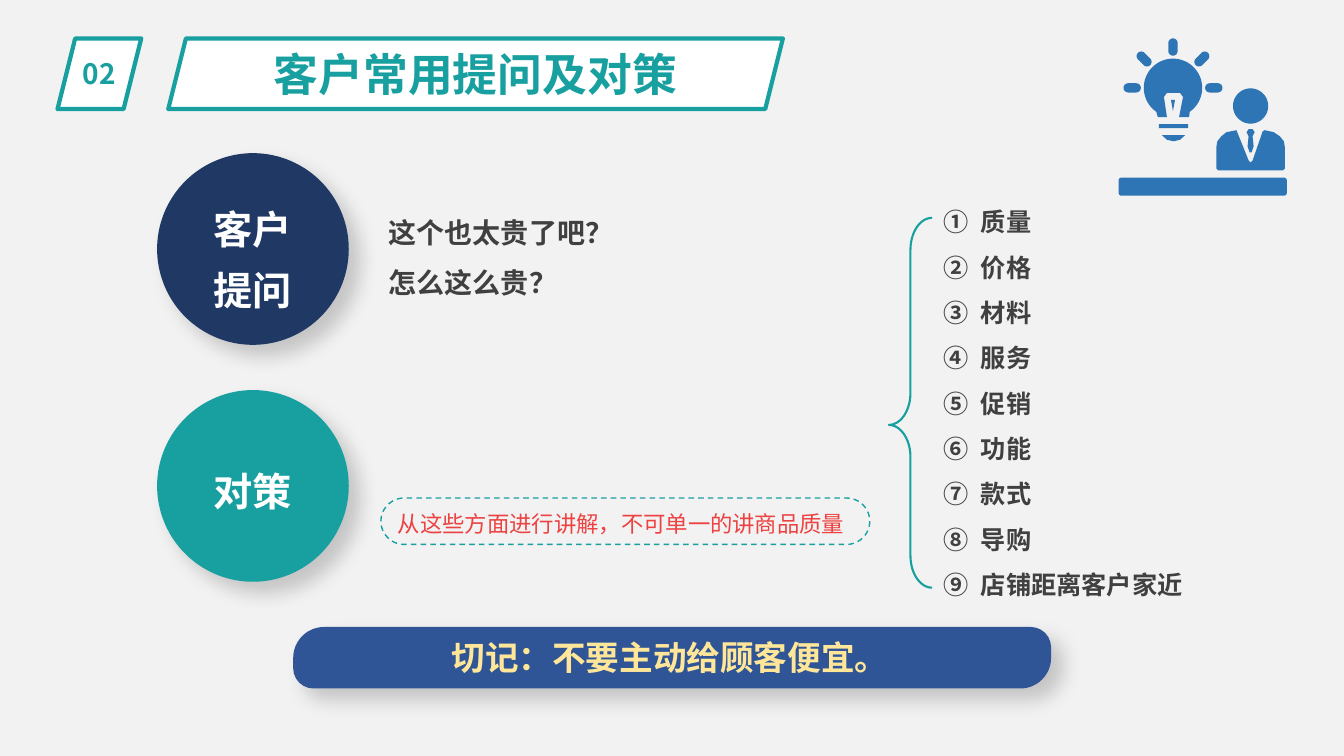
import math
from dataclasses import dataclass
from typing import Any, Optional

import pptx
import pptx.dml.color
import pptx.enum.dml
import pptx.enum.lang
import pptx.enum.shapes
import pptx.enum.text
import pptx.oxml
import pptx.oxml.ns
import pptx.util

Cm = pptx.util.Cm
Pt = pptx.util.Pt
SHAPE = pptx.enum.shapes.MSO_SHAPE
ALIGN = pptx.enum.text.PP_ALIGN
Points = list[tuple[float, float]]


@dataclass(frozen=True)
class Theme:
    font: str = "Noto Sans CJK SC"
    background: str = "F2F2F2"
    white: str = "FFFFFF"
    teal: str = "189FA0"
    navy: str = "203864"
    blue: str = "2F5597"
    icon: str = "2E75B6"
    ink: str = "404040"
    red: str = "EC4242"
    gold: str = "FFE699"
    title: int = 32
    circle: int = 28
    banner: int = 24
    body: int = 20
    item: int = 18
    hint: int = 16


@dataclass(frozen=True)
class Box:
    """Left, top, width and height in centimetres."""
    left: float
    top: float
    width: float
    height: float

    def lengths(self) -> tuple:
        return Cm(self.left), Cm(self.top), Cm(self.width), Cm(self.height)


@dataclass(frozen=True)
class TextStyle:
    size: int
    color: str
    bold: bool = True
    align: Optional[Any] = None
    spacing: Optional[float] = None


@dataclass(frozen=True)
class Outline:
    color: str
    width: float
    dash: Optional[Any] = None


@dataclass(frozen=True)
class Label:
    box: Box
    text: str
    size: int


@dataclass(frozen=True)
class Circle:
    top: float
    fill: str
    text: str
    text_box: Box


THEME = Theme()
HEADERS = [
    Label(Box(1.45, 0.97, 2.11, 1.78), "02", THEME.body),
    Label(Box(4.24, 0.97, 15.49, 1.78), "客户常用提问及对策", THEME.title),
]
CIRCLES = [
    Circle(3.86, THEME.navy, "客户\n提问", Box(5.11, 4.7, 2.51, 3.23)),
    Circle(9.83, THEME.teal, "对策", Box(5.11, 11.3, 2.51, 1.65)),
]
TOPICS = ["质量", "价格", "材料", "服务", "促销", "功能", "款式", "导购", "店铺距离客户家近"]


def rgb(color: str) -> Any:
    return pptx.dml.color.RGBColor.from_string(color)


def append_xml(parent: Any, xml: str) -> None:
    """Append an element whose opening tag has at least one attribute."""
    tag, rest = xml.split(" ", 1)
    parent.append(pptx.oxml.parse_xml(f"{tag} {pptx.oxml.ns.nsdecls('a')} {rest}"))


def add_shape(shapes: Any, kind: Any, box: Box, fill: Optional[str] = None,
              outline: Optional[Outline] = None, shadow: bool = False,
              adjustments: tuple = ()) -> Any:
    sp = shapes.add_shape(kind, *box.lengths())
    for i, value in enumerate(adjustments):
        sp.adjustments[i] = value
    paint(sp, fill, outline)
    if shadow:
        effects = sp._element.spPr.find(pptx.oxml.ns.qn("a:effectLst"))
        append_xml(effects, f'<a:outerShdw blurRad="{Pt(14)}" dist="{Pt(11)}" dir="2700000" '
                            'algn="tl" rotWithShape="0"><a:srgbClr val="000000">'
                            '<a:alpha val="18000"/></a:srgbClr></a:outerShdw>')
    return sp


def paint(sp: Any, fill: Optional[str], outline: Optional[Outline]) -> None:
    sp.shadow.inherit = False
    if fill:
        sp.fill.solid()
        sp.fill.fore_color.rgb = rgb(fill)
    else:
        sp.fill.background()
    if outline:
        sp.line.color.rgb = rgb(outline.color)
        sp.line.width = Pt(outline.width)
        if outline.dash:
            sp.line.dash_style = outline.dash
    else:
        sp.line.fill.background()


def set_text(tf: Any, text: str, style: TextStyle) -> None:
    tf.text = text
    for p in tf.paragraphs:
        p.alignment = style.align
        p.line_spacing = style.spacing
        for r in p.runs:
            r.font.size = Pt(style.size)
            r.font.bold = style.bold
            r.font.color.rgb = rgb(style.color)
            r.font.name = THEME.font
            r.font.language_id = pptx.enum.lang.MSO_LANGUAGE_ID.SIMPLIFIED_CHINESE
            append_xml(r._r.get_or_add_rPr(), f'<a:ea typeface="{THEME.font}"/>')


def add_text(shapes: Any, box: Box, text: str, style: TextStyle, wrap: bool = False) -> Any:
    tf = shapes.add_textbox(*box.lengths()).text_frame
    tf.word_wrap = wrap
    tf.auto_size = pptx.enum.text.MSO_AUTO_SIZE.SHAPE_TO_FIT_TEXT
    set_text(tf, text, style)
    return tf


def number_paragraphs(tf: Any) -> None:
    for p in tf.paragraphs:
        pPr = p._p.get_or_add_pPr()
        pPr.set("marL", str(Cm(0.95)))
        pPr.set("indent", str(-Cm(0.95)))
        append_xml(pPr, '<a:buFont typeface="+mj-ea"/>')
        append_xml(pPr, '<a:buAutoNum type="circleNumDbPlain"/>')


def arc(cx: float, cy: float, r: float, start: float, end: float, steps: int = 12) -> Points:
    angles = [math.radians(start + (end - start) * i / steps) for i in range(steps + 1)]
    return [(cx + r * math.cos(a), cy + r * math.sin(a)) for a in angles]


def ray(angle: float) -> Points:
    """Capsule pointing away from the bulb centre."""
    dx, dy = math.cos(math.radians(angle)), math.sin(math.radians(angle))
    outer = arc(54 + 44.5 * dx, 49 + 44.5 * dy, 4.6, angle - 90, angle + 90)
    inner = arc(54 + 36.5 * dx, 49 + 36.5 * dy, 4.6, angle + 90, angle + 270)
    return outer + inner


def icon_contours() -> list[Points]:
    """Outlines in hundredths of an inch from the icon's corner."""
    desk = [pt for x, y, a in [(3, 141, 180), (164, 141, 270), (164, 153, 0), (3, 153, 90)]
            for pt in arc(x, y, 3, a, a + 90, 4)]
    bulb = arc(54, 49, 29, 125, 415, 48) + [
        (70, 78), (60, 78), (64, 58), (61, 54), (48, 54), (45, 58), (48, 78), (39, 78)]
    filament = [(52, 61), (56, 61), (54, 72)]
    collar = [(40, 85), (69, 85), (69, 89), (40, 89)]
    cap = [(43, 96), (66, 96), (61, 100.5), (54.5, 102), (48, 100.5)]
    head = arc(131, 67, 17.5, 0, 360, 48)
    suit = [(117, 91), (129, 121), (131, 123), (133, 121), (143, 92), (145, 91), (154, 93),
            (160, 97), (164, 102), (165, 108), (165, 129), (163, 131), (99, 131), (97, 129),
            (97, 108), (98, 102), (102, 97), (107, 93)]
    tie = [(129, 90), (133, 90), (135, 93), (133, 97), (134, 107), (132, 113), (130, 113),
           (128, 107), (129, 97), (127, 93)]
    rays = [ray(angle) for angle in range(180, 361, 45)]
    return [desk, bulb, filament, collar, cap, head, suit, tie, *rays]


def add_icon(shapes: Any) -> None:
    contours = [[(x * 100, y * 100) for x, y in c] for c in icon_contours()]
    builder = shapes.build_freeform(*contours[0][0], scale=Cm(0.0254) / 100)
    for i, contour in enumerate(contours):
        if i:
            builder.move_to(*contour[0])
        builder.add_line_segments(contour[1:], close=True)
    paint(builder.convert_to_shape(Cm(28.19), Cm(0.97)), THEME.icon, None)


def main() -> None:
    prs = pptx.Presentation()
    prs.slide_width, prs.slide_height = Cm(33.87), Cm(19.05)
    s = prs.slides.add_slide(prs.slide_layouts[6])
    s.background.fill.solid()
    s.background.fill.fore_color.rgb = rgb(THEME.background)
    for header in HEADERS:
        sp = add_shape(s.shapes, SHAPE.PARALLELOGRAM, header.box, THEME.white, Outline(THEME.teal, 3))
        sp.text_frame.vertical_anchor = pptx.enum.text.MSO_ANCHOR.MIDDLE
        set_text(sp.text_frame, header.text, TextStyle(header.size, THEME.teal, align=ALIGN.CENTER))
    for circle in CIRCLES:
        group = s.shapes.add_group_shape().shapes
        add_shape(group, SHAPE.OVAL, Box(3.96, circle.top, 4.83, 4.83), circle.fill, shadow=True)
        add_text(group, circle.text_box, circle.text,
                 TextStyle(THEME.circle, THEME.white, align=ALIGN.CENTER, spacing=1.3), wrap=True)
    add_text(s.shapes, Box(9.55, 4.88, 6.22, 2.67), "这个也太贵了吧？\n怎么这么贵？",
             TextStyle(THEME.body, THEME.ink, spacing=1.5))
    number_paragraphs(add_text(s.shapes, Box(23.52, 4.7, 6.78, 10.64), "\n".join(TOPICS),
                               TextStyle(THEME.item, THEME.ink, spacing=1.5), wrap=True))
    add_shape(s.shapes, SHAPE.LEFT_BRACE, Box(22.4, 5.49, 1.09, 9.32),
              outline=Outline(THEME.teal, 1.5), adjustments=(0.74, 0.56))
    hint = s.shapes.add_group_shape().shapes
    add_text(hint, Box(9.78, 12.4, 11.91, 1.17), "从这些方面进行讲解，不可单一的讲商品质量",
             TextStyle(THEME.hint, THEME.red, bold=False, spacing=1.5))
    add_shape(hint, SHAPE.ROUNDED_RECTANGLE, Box(9.6, 12.55, 12.32, 1.17), adjustments=(0.5,),
              outline=Outline(THEME.teal, 1, pptx.enum.dml.MSO_LINE.DASH))
    banner = s.shapes.add_group_shape().shapes
    add_shape(banner, SHAPE.ROUND_2_DIAG_RECTANGLE, Box(7.39, 15.8, 19.1, 1.55), THEME.blue,
              shadow=True, adjustments=(0.5, 0.33))
    add_text(banner, Box(11.13, 15.93, 11.63, 1.27), "切记：不要主动给顾客便宜。",
             TextStyle(THEME.banner, THEME.gold))
    add_icon(s.shapes)
    prs.save("out.pptx")


if __name__ == "__main__":
    main()
